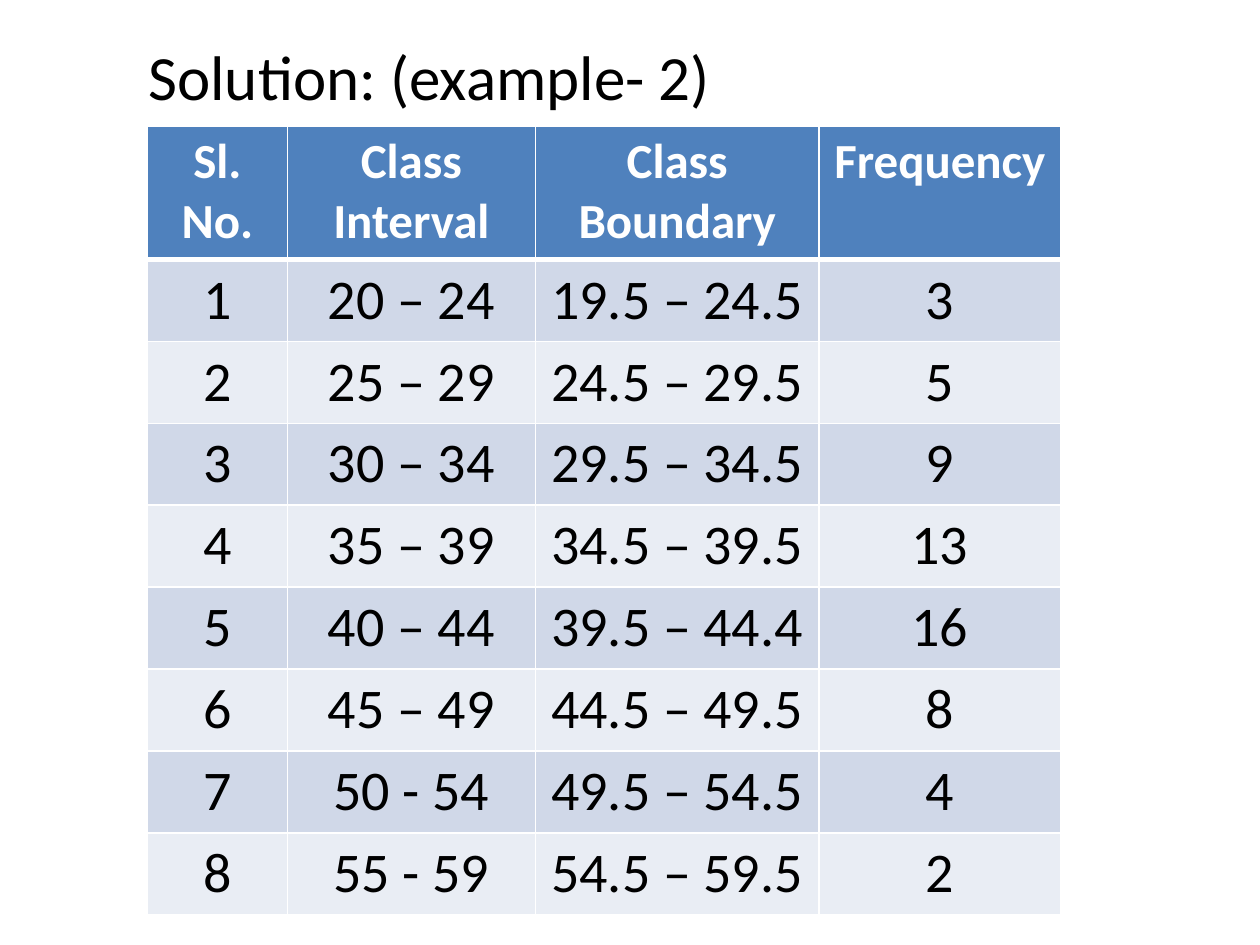
from dataclasses import dataclass

from lxml.etree import SubElement
from pptx import Presentation
from pptx.dml.color import RGBColor as Color
from pptx.enum.text import MSO_AUTO_SIZE as AutoSize, PP_ALIGN as Align
from pptx.oxml.ns import qn
from pptx.util import Inches, Pt


@dataclass(frozen=True)
class Theme:
    font: str = "Calibri"
    black: str = "000000"
    white: str = "FFFFFF"
    header_fill: str = "4F81BD"
    bands: tuple[str, str] = ("D0D8E8", "E9EDF4")
    title_size: int = 36
    header_size: int = 28
    body_size: int = 32
    thin_line: int = 1
    thick_line: int = 3


@dataclass(frozen=True)
class RowStyle:
    fill: str
    color: str
    size: int
    bold: bool
    top: int
    bottom: int


@dataclass(frozen=True)
class ClassRow:
    interval: str
    boundary: str
    frequency: int


THEME = Theme()
HEADERS = ("Sl. No.", "Class Interval", "Class Boundary", "Frequency")
CLASSES = (
    ClassRow("20 – 24", "19.5 – 24.5", 3),
    ClassRow("25 – 29", "24.5 – 29.5", 5),
    ClassRow("30 – 34", "29.5 – 34.5", 9),
    ClassRow("35 – 39", "34.5 – 39.5", 13),
    ClassRow("40 – 44", "39.5 – 44.4", 16),
    ClassRow("45 – 49", "44.5 – 49.5", 8),
    ClassRow("50 - 54", "49.5 – 54.5", 4),
    ClassRow("55 - 59", "54.5 – 59.5", 2),
)
COLUMN_WIDTHS = (1.11, 1.97, 2.25, 1.92)
HEADER_HEIGHT, BODY_HEIGHT = 1.06, 0.65


def write(para, text: str, size: int, color: str, bold: bool = False) -> None:
    span = para.add_run()
    span.text = text
    formats = {"name": THEME.font, "size": Pt(size), "bold": bold}
    for name, value in formats.items():
        setattr(span.font, name, value)
    span.font.color.rgb = Color.from_string(color)


def draw_borders(cell, top: int, bottom: int) -> None:
    properties = cell._tc.get_or_add_tcPr()
    widths = {"L": THEME.thin_line, "R": THEME.thin_line, "T": top, "B": bottom}
    for side, width in widths.items():
        line = SubElement(properties, qn(f"a:ln{side}"), w=str(Pt(width)))
        fill = SubElement(line, qn("a:solidFill"))
        SubElement(fill, qn("a:srgbClr"), val=THEME.white)


def row_style(index: int) -> RowStyle:
    thin, thick = THEME.thin_line, THEME.thick_line
    if index == 0:
        return RowStyle(THEME.header_fill, THEME.white, THEME.header_size, True, thin, thick)
    top = thick if index == 1 else thin
    band = THEME.bands[(index - 1) % 2]
    return RowStyle(band, THEME.black, THEME.body_size, False, top, thin)


def draw_cell(cell, text: str, style: RowStyle) -> None:
    # Borders come before the fill in the cell properties
    draw_borders(cell, style.top, style.bottom)
    cell.fill.solid()
    cell.fill.fore_color.rgb = Color.from_string(style.fill)
    para = cell.text_frame.paragraphs[0]
    para.alignment = Align.CENTER
    write(para, text, style.size, style.color, style.bold)


def draw_title(page) -> None:
    box = page.shapes.add_textbox(Inches(1.08), Inches(0.25), Inches(4.7), Inches(0.71))
    formats = {"word_wrap": False, "auto_size": AutoSize.SHAPE_TO_FIT_TEXT}
    for name, value in formats.items():
        setattr(box.text_frame, name, value)
    write(box.text_frame.paragraphs[0], "Solution: (example- 2)", THEME.title_size, THEME.black)


def draw_table(page) -> None:
    rows = [HEADERS]
    for number, entry in enumerate(CLASSES, start=1):
        rows.append((str(number), entry.interval, entry.boundary, str(entry.frequency)))
    heights = [HEADER_HEIGHT] + [BODY_HEIGHT] * len(CLASSES)
    table = page.shapes.add_table(
        len(rows), len(HEADERS), Inches(1.17), Inches(1),
        Inches(sum(COLUMN_WIDTHS)), Inches(sum(heights)),
    ).table
    for column, width in zip(table.columns, COLUMN_WIDTHS):
        column.width = Inches(width)
    for index, (row, height, texts) in enumerate(zip(table.rows, heights, rows)):
        row.height = Inches(height)
        for cell, text in zip(row.cells, texts):
            draw_cell(cell, text, row_style(index))


def main() -> None:
    deck = Presentation()
    deck.slide_width, deck.slide_height = Inches(10), Inches(7.5)
    page = deck.slides.add_slide(deck.slide_layouts[6])
    draw_title(page)
    draw_table(page)
    deck.save("out.pptx")


if __name__ == "__main__":
    main()
